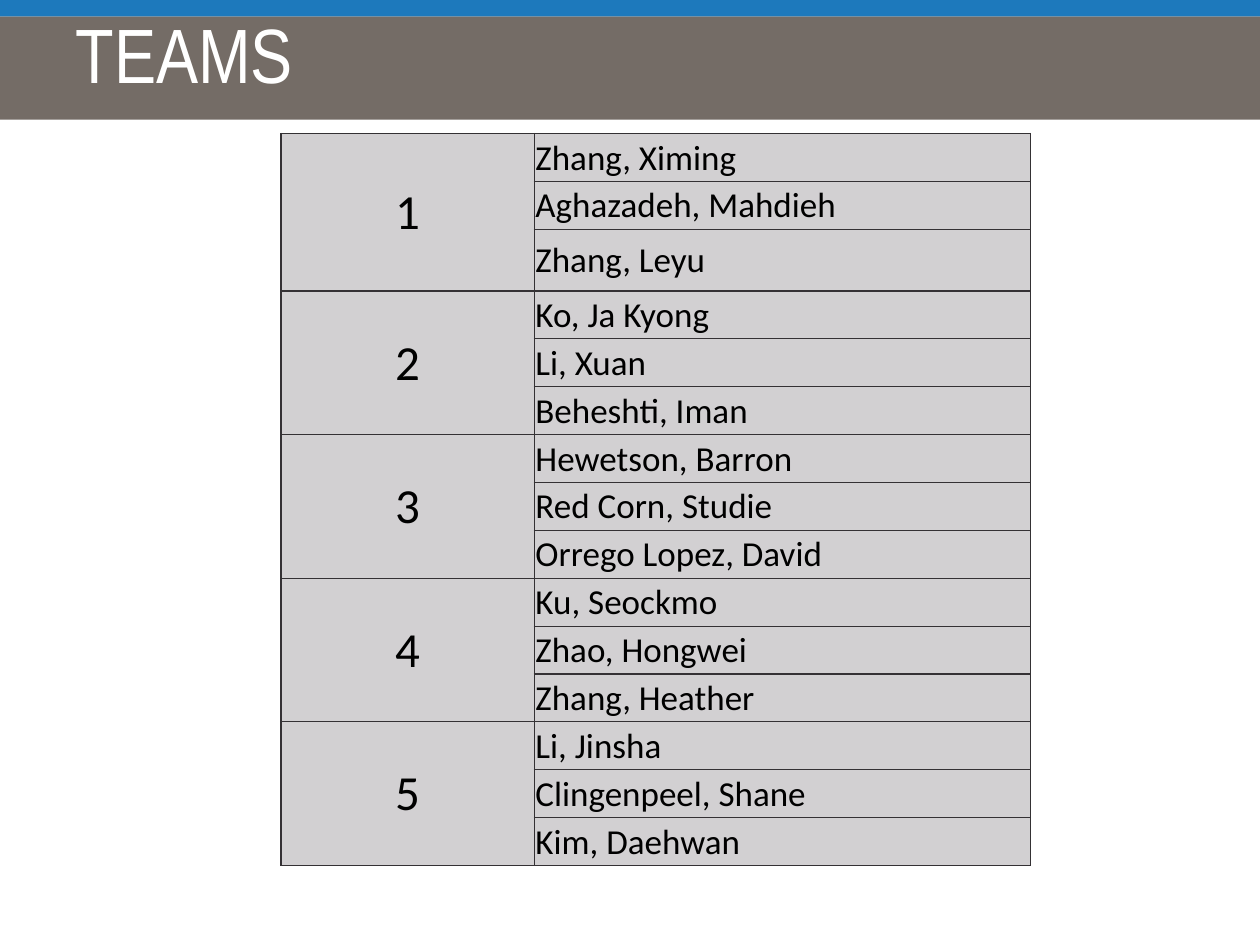
from lxml import etree
from pptx import Presentation
from pptx.dml.color import RGBColor
from pptx.enum.shapes import MSO_SHAPE
from pptx.enum.text import MSO_ANCHOR, PP_ALIGN
from pptx.oxml.ns import qn
from pptx.util import Inches, Pt

RECT = MSO_SHAPE.RECTANGLE
TOP, MIDDLE = MSO_ANCHOR.TOP, MSO_ANCHOR.MIDDLE
LEFT, CENTER = PP_ALIGN.LEFT, PP_ALIGN.CENTER

TEAMS = [
    ["Zhang, Ximing", "Aghazadeh, Mahdieh", "Zhang, Leyu"],
    ["Ko, Ja Kyong", "Li, Xuan", "Beheshti, Iman"],
    ["Hewetson, Barron", "Red Corn, Studie", "Orrego Lopez, David"],
    ["Ku, Seockmo", "Zhao, Hongwei", "Zhang, Heather"],
    ["Li, Jinsha", "Clingenpeel, Shane", "Kim, Daehwan"],
]
SIZE = len(TEAMS[0])


def color(code):
    return RGBColor.from_string(code)


def write(frame, text, font="Calibri", size=20, ink="000000", align=LEFT):
    para = frame.paragraphs[0]
    para.text = text
    para.alignment = align
    for style in (para.font, *(run.font for run in para.runs)):
        style.name = font
        style.size = Pt(size)
        style.color.rgb = color(ink)


class Deck:
    gray, blue, white = "746C66", "1D79BC", "FFFFFF"
    cell_fill, border = "D2D0D2", "343134"

    def __init__(self):
        self.prs = Presentation()
        self.prs.slide_width, self.prs.slide_height = Inches(10), Inches(7.5)
        self.slide = self.prs.slides.add_slide(self.prs.slide_layouts[5])

    def band(self, top, height, fill):
        """Add a full-width bar behind the title."""
        bar = self.slide.shapes.add_shape(
            RECT, 0, Inches(top), self.prs.slide_width, Inches(height))
        bar.shadow.inherit = False
        bar.fill.solid()
        bar.fill.fore_color.rgb = color(fill)
        bar.line.fill.background()
        self.slide.shapes.title._element.addprevious(bar._element)

    def title(self, text):
        head = self.slide.shapes.title
        head.left, head.top = Inches(0.5), Inches(0)
        head.width, head.height = Inches(9), Inches(1.25)
        frame = head.text_frame
        frame.vertical_anchor = TOP
        frame.margin_top = Inches(0.05)
        write(frame, text, font="Arial Narrow", size=44, ink=self.white)

    def cell(self, cell, text, **style):
        cell.margin_left = cell.margin_right = cell.margin_top = Inches(0.01)
        cell.margin_bottom = 0
        cell.vertical_anchor = MIDDLE
        write(cell.text_frame, text, **style)
        props = cell._tc.get_or_add_tcPr()
        for side in ("a:lnL", "a:lnR", "a:lnT", "a:lnB"):
            line = etree.SubElement(props, qn(side), w=str(Pt(0.75)))
            solid = etree.SubElement(line, qn("a:solidFill"))
            etree.SubElement(solid, qn("a:srgbClr"), val=self.border)
        cell.fill.solid()
        cell.fill.fore_color.rgb = color(self.cell_fill)

    def table(self, teams):
        count = len(teams) * SIZE
        grid = self.slide.shapes.add_table(
            count, 2, Inches(2.23), Inches(1.06),
            Inches(5.95), Inches(0.38 * count)).table
        grid.first_row = grid.horz_banding = False
        for col, width in zip(grid.columns, (2.01, 3.94)):
            col.width = Inches(width)
        for row in grid.rows:
            row.height = Inches(0.38)
        grid.rows[2].height = Inches(0.49)
        for num, names in enumerate(teams):
            first = num * SIZE
            for step, name in enumerate(names):
                label = "" if step else str(num + 1)
                self.cell(grid.cell(first + step, 0), label,
                          size=20 if step else 28, align=CENTER)
                self.cell(grid.cell(first + step, 1), name)
            grid.cell(first, 0).merge(grid.cell(first + SIZE - 1, 0))


def main():
    deck = Deck()
    deck.band(0.13, 0.82, deck.gray)
    deck.band(0, 0.13, deck.blue)
    deck.title("TEAMS")
    deck.table(TEAMS)
    deck.prs.save("out.pptx")


if __name__ == "__main__":
    main()
